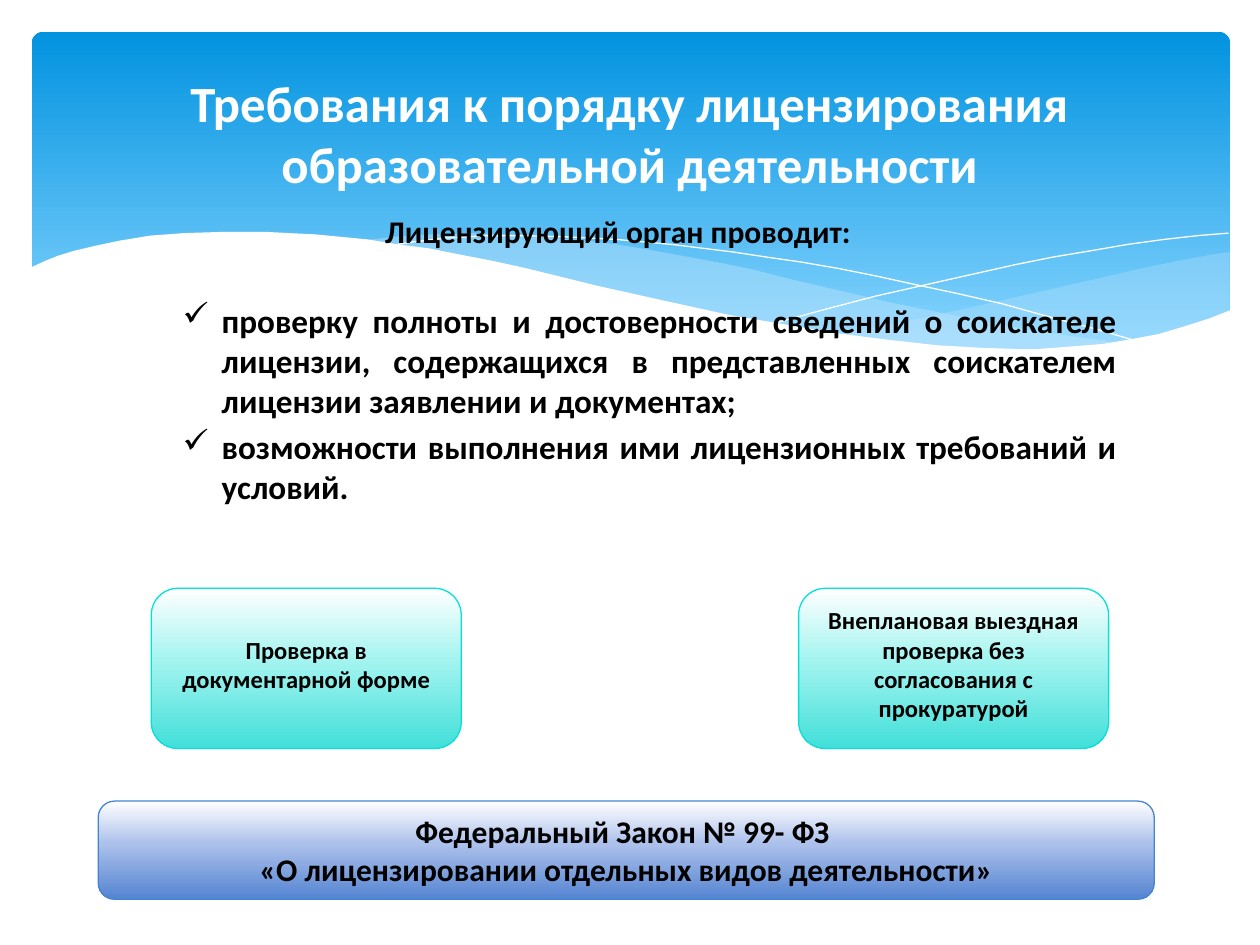
from lxml import etree
from pptx import Presentation
from pptx import util as u
from pptx.dml.color import RGBColor
from pptx.enum import shapes, text
from pptx.oxml.ns import qn

FONT = "Calibri"
COLORS = {
    "white": "FFFFFF", "black": "000000", "wave": "C6E7FC",
    "sky": "0293E0", "light sky": "83D3FE",
    "teal line": "05E0DB", "teal mid": "A5F4F0", "teal": "42DFD9",
    "blue line": "4584D3", "blue mid": "ABC0EB", "blue": "5484D1",
}
HEADER_STOPS = [(0, "sky"), (90, "light sky")]
TEAL_STOPS = [(0, "white"), (44, "teal mid"), (100, "teal")]
BLUE_STOPS = [(0, "white"), (44, "blue mid"), (100, "blue")]

# Outlines of the header waves, in hundredths of an inch
RIGHT_WAVE = [
    (976, 200), (962, 202), (935, 207), (906, 213), (876, 220), (832, 230),
    (779, 242), (729, 253), (683, 262), (661, 265), (691, 269), (719, 272),
    (745, 275), (769, 277), (803, 278), (835, 277), (863, 275), (889, 272),
    (913, 267), (935, 262), (949, 257), (963, 252), (976, 247),
]
MIDDLE_WAVE = [
    (893, 273), (866, 269), (837, 265), (807, 260), (775, 254), (741, 247),
    (706, 240), (668, 231), (629, 222), (598, 214), (569, 208), (541, 203),
    (514, 198), (489, 194), (465, 191), (442, 189), (420, 187), (380, 185),
    (344, 186), (313, 188), (286, 191), (323, 196), (362, 203), (404, 211),
    (449, 222), (491, 232), (530, 240), (566, 248), (601, 255), (634, 261),
    (665, 266), (695, 270), (722, 274), (748, 276), (773, 277), (807, 278),
    (838, 278), (867, 276),
]
FALLING_LINE = [
    (309, 195), (328, 192), (353, 189), (387, 187), (416, 187), (450, 188),
    (489, 190), (533, 194), (582, 200), (608, 204), (636, 208), (665, 213),
    (695, 219), (727, 226), (760, 233), (795, 241), (831, 251), (869, 261),
    (907, 272),
]
RISING_LINE = [
    (613, 257), (653, 246), (695, 235), (748, 223), (806, 210), (836, 204),
    (866, 199), (895, 194), (924, 190), (951, 187), (975, 185),
]
WHITE_WAVE = [
    (977, 246), (959, 253), (940, 259), (920, 265), (899, 269), (875, 273),
    (850, 275), (823, 277), (809, 277), (778, 276), (744, 274), (708, 270),
    (668, 265), (626, 258), (579, 250), (529, 239), (475, 227), (418, 213),
    (391, 207), (365, 202), (340, 197), (316, 194), (292, 190), (271, 188),
    (250, 186), (230, 185), (211, 184), (177, 184), (146, 185), (119, 187),
    (95, 191), (76, 195), (59, 199), (46, 203), (36, 207), (23, 213),
    (23, 329), (977, 329),
]


class SlideBuilder:
    def __init__(self, slide):
        self.slide = slide

    def color(self, name):
        return RGBColor.from_string(COLORS[name])

    def set_gradient(self, shape, stops):
        """Fill from top to bottom; stops are (percent, colour name)."""
        shape.fill.gradient()
        shape.fill.gradient_angle = 270
        stop_list = shape._element.spPr.find(qn("a:gradFill")).find(qn("a:gsLst"))
        for old_stop in list(stop_list):
            stop_list.remove(old_stop)
        for percent, name in stops:
            stop = etree.SubElement(stop_list, qn("a:gs"), pos=str(percent * 1000))
            etree.SubElement(stop, qn("a:srgbClr"), val=COLORS[name])

    def panel(self, box, stops, line=None, radius=0.1667):
        shape = self.slide.shapes.add_shape(
            shapes.MSO_SHAPE.ROUNDED_RECTANGLE, *map(u.Cm, box))
        shape.adjustments[0] = radius
        shape.shadow.inherit = False
        self.set_gradient(shape, stops)
        if line:
            shape.line.color.rgb = self.color(line)
            shape.line.width = u.Pt(0.75)
        else:
            shape.line.fill.background()
        return shape

    def outline(self, points, closed):
        builder = self.slide.shapes.build_freeform(*points[0], scale=u.Cm(0.0254))
        builder.add_line_segments(points[1:], close=closed)
        shape = builder.convert_to_shape()
        shape.shadow.inherit = False
        return shape

    def wave(self, points, name, opacity=100):
        shape = self.outline(points, closed=True)
        shape.line.fill.background()
        shape.fill.solid()
        shape.fill.fore_color.rgb = self.color(name)
        if opacity < 100:
            color = shape._element.spPr.find(qn("a:solidFill"))[0]
            etree.SubElement(color, qn("a:alpha"), val=str(opacity * 1000))

    def curve(self, points):
        shape = self.outline(points, closed=False)
        shape.fill.background()
        shape.line.color.rgb = self.color("white")
        shape.line.width = u.Pt(0)

    def set_text(self, shape, lines, size, color="black",
                 anchor=text.MSO_ANCHOR.MIDDLE):
        frame = shape.text_frame
        frame.word_wrap = True
        frame.vertical_anchor = anchor
        frame.text = "\n".join(lines)
        for paragraph in frame.paragraphs:
            paragraph.alignment = text.PP_ALIGN.CENTER
            self.set_font(paragraph, size, color)
        return frame

    def set_font(self, paragraph, size, color="black"):
        font = paragraph.font
        font.name, font.size, font.bold = FONT, u.Pt(size), True
        font.color.rgb = self.color(color)

    def text_box(self, box, lines, size, color="black",
                 anchor=text.MSO_ANCHOR.TOP):
        shape = self.slide.shapes.add_textbox(*map(u.Cm, box))
        return self.set_text(shape, lines, size, color, anchor)

    def check_item(self, frame, words, size, space_before):
        paragraph = frame.add_paragraph()
        paragraph.text = words
        paragraph.level = 1
        paragraph.alignment = text.PP_ALIGN.JUSTIFY
        paragraph.space_before = u.Pt(space_before)
        self.set_font(paragraph, size)
        properties = paragraph._p.get_or_add_pPr()
        properties.set("marL", str(u.Cm(2.06)))
        properties.set("indent", str(-u.Cm(0.79)))
        bullet = etree.Element(qn("a:buChar"), char="✓")
        properties.find(qn("a:defRPr")).addprevious(bullet)

    def card(self, box, lines):
        shape = self.panel(box, TEAL_STOPS, "teal line")
        self.set_text(shape, lines, 14).margin_bottom = u.Cm(0.3)


def main():
    presentation = Presentation()
    presentation.slide_width, presentation.slide_height = u.Cm(25.4), u.Cm(19.05)
    slide = presentation.slides.add_slide(presentation.slide_layouts[6])
    builder = SlideBuilder(slide)

    builder.panel((0.64, 0.64, 24.16, 6.86), HEADER_STOPS, radius=0.034)
    builder.wave(RIGHT_WAVE, "wave", 29)
    builder.wave(MIDDLE_WAVE, "wave", 40)
    builder.curve(FALLING_LINE)
    builder.curve(RISING_LINE)
    builder.wave(WHITE_WAVE, "white")

    builder.text_box(
        (1.27, 0.94, 22.86, 3.48),
        ["Требования к порядку лицензирования образовательной деятельности"],
        29, "white", text.MSO_ANCHOR.MIDDLE)

    body = builder.text_box((2.16, 4.14, 20.6, 10.49),
                            ["Лицензирующий орган проводит:"], 18)
    body.paragraphs[0].space_before = u.Pt(3.6)
    builder.check_item(
        body, "проверку полноты и достоверности сведений о соискателе лицензии, "
        "содержащихся в представленных соискателем лицензии заявлении и документах;",
        19, 29)
    builder.check_item(
        body, "возможности выполнения ими лицензионных требований и условий.", 19, 3.8)

    cards = [
        (3.05, ["Проверка в документарной форме"]),
        (16.1, ["Внеплановая выездная", "проверка без согласования с прокуратурой"]),
    ]
    for left, lines in cards:
        builder.card((left, 11.86, 6.25, 3.23), lines)

    law = builder.panel((1.98, 16.15, 21.29, 1.98), BLUE_STOPS, "blue line")
    builder.set_text(law, ["Федеральный Закон № 99- ФЗ ",
                           "«О лицензировании отдельных видов деятельности»"], 18)

    presentation.save("out.pptx")


if __name__ == "__main__":
    main()
